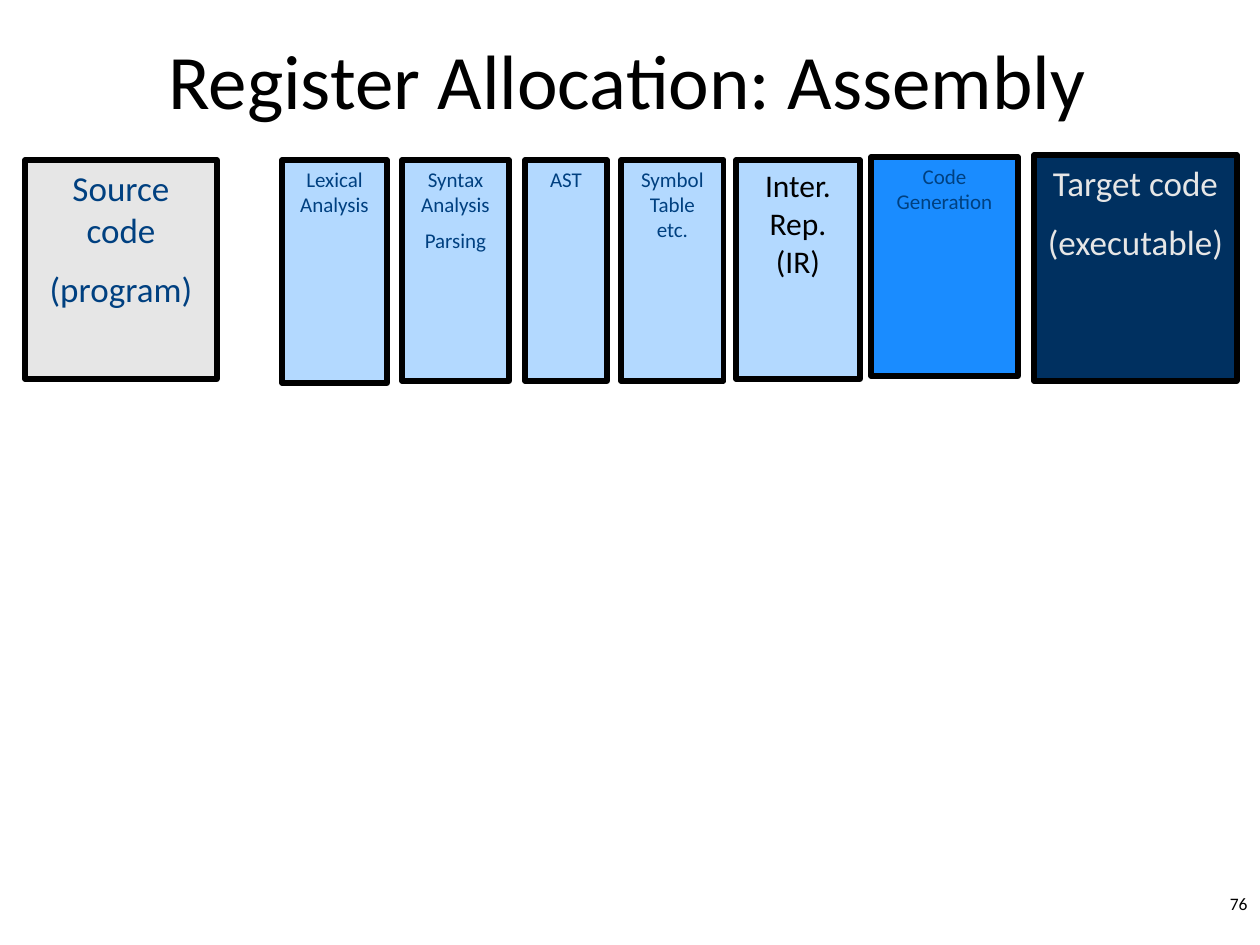
from pptx import Presentation
from pptx.dml.color import RGBColor
from pptx.enum.shapes import MSO_SHAPE
from pptx.enum.text import MSO_ANCHOR, MSO_AUTO_SIZE, PP_ALIGN
from pptx.util import Emu, Pt

PX = 914400 // 126
FONT = "Calibri"
BLACK, NAVY, DEEP_NAVY = "000000", "004080", "003060"
GREY, PALE_BLUE, BLUE = "E6E6E6", "B3D9FF", "1A8CFF"

TITLE = "Register Allocation: Assembly"
SLIDE_NUMBER = "76"

# paragraphs, (left, top, width, height) in px, fill, text size, text colour
STAGES = [
    (["Source code", "(program)"], (25, 160, 192, 219), GREY, 20, NAVY),
    (["Lexical\nAnalysis"], (282, 160, 105, 223), PALE_BLUE, 12, NAVY),
    (["Syntax Analysis", "Parsing"], (402, 160, 107, 221), PALE_BLUE, 12, NAVY),
    (["AST"], (525, 160, 82, 221), PALE_BLUE, 12, NAVY),
    (["Symbol\nTable\netc."], (621, 160, 103, 221), PALE_BLUE, 12, NAVY),
    (["Inter.\nRep.\n(IR)"], (736, 160, 124, 219), PALE_BLUE, 18, BLACK),
    (["Code\nGeneration"], (871, 157, 147, 219), BLUE, 12, NAVY),
    (["Target code", "(executable)"], (1034, 155, 203, 226), DEEP_NAVY, 20, GREY),
]


def color(value):
    return RGBColor.from_string(value)


def px(*lengths):
    return [Emu(length * PX) for length in lengths]


def write(shape, paragraphs, size, text_color, alignment, anchor=MSO_ANCHOR.TOP):
    frame = shape.text_frame
    frame_format = {
        "word_wrap": True,
        "auto_size": MSO_AUTO_SIZE.NONE,
        "vertical_anchor": anchor,
    }
    for name, value in frame_format.items():
        setattr(frame, name, value)
    for index, text in enumerate(paragraphs):
        paragraph = frame.add_paragraph() if index else frame.paragraphs[0]
        paragraph.text = text
        paragraph.alignment = alignment
        paragraph.space_before = Pt(size / 2 if index else 0)
        for run in paragraph.runs:
            for name, value in {"name": FONT, "size": Pt(size)}.items():
                setattr(run.font, name, value)
            run.font.color.rgb = color(text_color)


def add_stage(slide, paragraphs, box, fill, size, text_color):
    shape = slide.shapes.add_shape(MSO_SHAPE.RECTANGLE, *px(*box))
    shape.shadow.inherit = False
    shape.fill.solid()
    shape.fill.fore_color.rgb = color(fill)
    shape.line.color.rgb = color(BLACK)
    shape.line.width = Pt(3)
    write(shape, paragraphs, size, text_color, PP_ALIGN.CENTER)


def main():
    presentation = Presentation()
    presentation.slide_width, presentation.slide_height = px(1260, 945)
    slide = presentation.slides.add_slide(presentation.slide_layouts[5])

    title = slide.shapes.title
    title.left, title.top, title.width, title.height = px(92, 0, 1071, 158)
    write(title, [TITLE], 44, BLACK, PP_ALIGN.CENTER, MSO_ANCHOR.MIDDLE)

    number = slide.shapes.add_textbox(*px(998, 887, 262, 38))
    write(number, [SLIDE_NUMBER], 10, BLACK, PP_ALIGN.RIGHT)

    for stage in STAGES:
        add_stage(slide, *stage)

    presentation.save("out.pptx")


if __name__ == "__main__":
    main()
